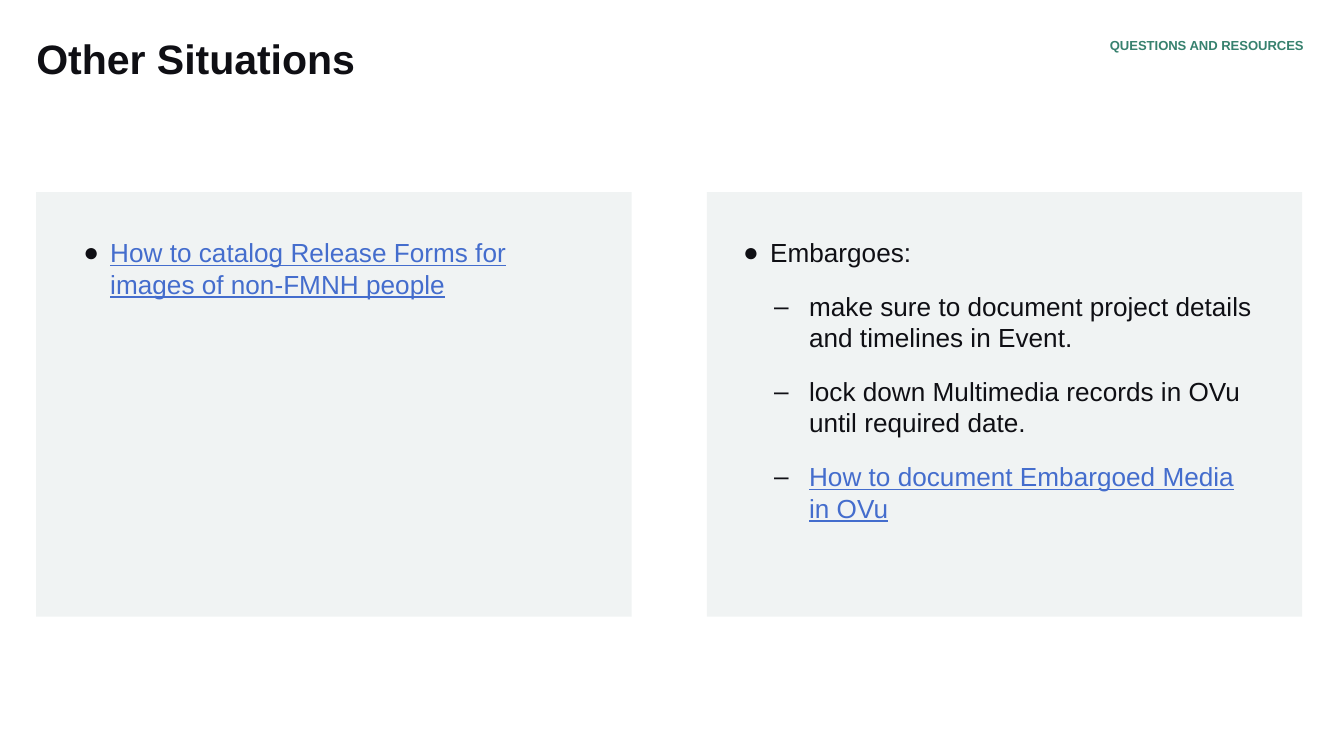
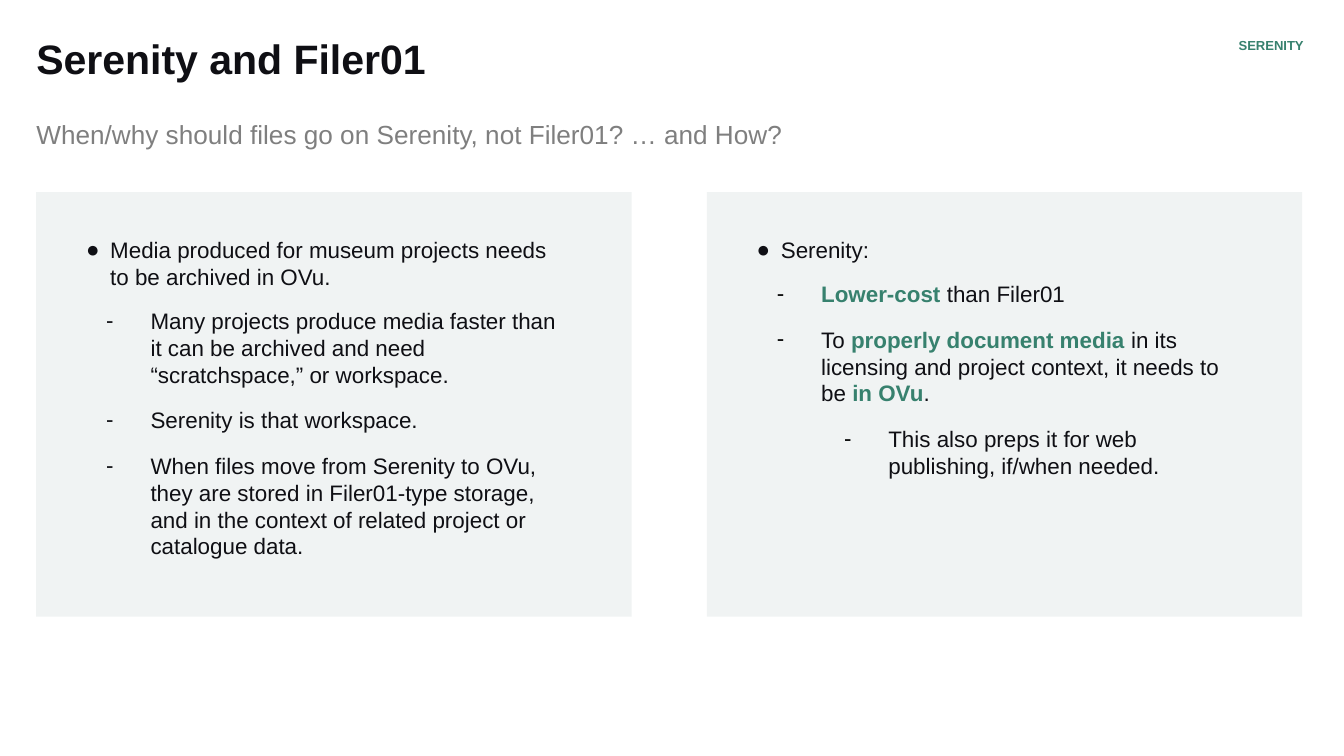
from lxml.etree import SubElement
from pptx import Presentation
from pptx.dml.color import RGBColor
from pptx.enum.shapes import MSO_SHAPE
from pptx.enum.text import MSO_ANCHOR, MSO_AUTO_SIZE, PP_ALIGN
from pptx.oxml.ns import qn
from pptx.util import Inches, Pt

INK = RGBColor(0x0F, 0x0F, 0x14)
BLACK = RGBColor(0x00, 0x00, 0x00)
GREEN = RGBColor(0x37, 0x81, 0x6E)
GREY = RGBColor(0x7F, 0x7F, 0x7F)
LINK = RGBColor(0x44, 0x6D, 0xCD)
PANEL = RGBColor(0xF0, 0xF3, 0xF3)
FONT = "Arial"
PANEL_LEFTS = (0.27, 5.26)

# Bullet styles: character, level, left margin, hanging indent
DOT = ("●", 0, 0.2, 0.2)
DOT_TIGHT = ("●", 0, 0.2, 0.18)
DASH = ("–", 1, 0.49, 0.26)
HYPHEN = ("-", 0, 0.5, 0.33)
SUB_HYPHEN = ("-", 1, 1, 0.33)


class Deck:
    def __init__(self):
        self.prs = Presentation()
        self.prs.slide_width = Inches(10)
        self.prs.slide_height = Inches(10) * 9 // 16
        self.s = None

    def add_slide(self, title, tag):
        """Start a two-column slide with its title, section tag and panels."""
        self.s = self.prs.slides.add_slide(self.prs.slide_layouts[3])
        self.line(self.s.shapes.title, (0.27, 0.29, 7.99, 0.59), title, 22, INK,
                  bold=True, spacing=0.9)
        for left in PANEL_LEFTS:
            self.panel(left)
        self.line(self.text_box(), (7.57, 0.29, 2.13, 0.16), tag, 7, GREEN,
                  bold=True, spacing=0.9, align=PP_ALIGN.RIGHT, right=0)

    def text_box(self):
        return self.s.shapes.add_textbox(0, 0, 0, 0)

    def frame(self, sp, at, top=0, right=0.1):
        sp.left, sp.top, sp.width, sp.height = (Inches(v) for v in at)
        tf = sp.text_frame
        tf.word_wrap = True
        tf.auto_size = MSO_AUTO_SIZE.NONE
        tf.vertical_anchor = MSO_ANCHOR.TOP
        tf.margin_left, tf.margin_top = Inches(0), Inches(top)
        tf.margin_right, tf.margin_bottom = Inches(right), Inches(0.1)
        return tf

    def style(self, font, size, color, bold=False):
        font.name, font.size, font.bold = FONT, Pt(size), bold
        font.color.rgb = color

    def line(self, sp, at, text, size, color, bold=False, spacing=1.0,
             align=PP_ALIGN.LEFT, right=0.1):
        tf = self.frame(sp, at, right=right)
        tf.text = text
        p = tf.paragraphs[0]
        p.alignment, p.line_spacing = align, spacing
        self.style(p.runs[0].font, size, color, bold)

    def subtitle(self, text):
        self.line(self.text_box(), (0.27, 0.88, 7.09, 0.47), text, 14, GREY)

    def panel(self, left):
        sp = self.s.shapes.add_shape(MSO_SHAPE.RECTANGLE, Inches(left), Inches(1.43),
                                     Inches(4.43), Inches(3.16))
        sp.shadow.inherit = False
        sp.fill.solid()
        sp.fill.fore_color.rgb = PANEL
        sp.line.fill.background()
        # Panels lie behind the placeholders
        self.s.shapes._spTree.insert(2, sp._element)

    def bullet(self, p, kind, color):
        char, level, margin, hang = kind
        p.level = level
        pPr = p._p.get_or_add_pPr()
        pPr.set("marL", str(Inches(margin)))
        pPr.set("indent", str(-Inches(hang)))
        clr = SubElement(pPr, qn("a:buClr"))
        SubElement(clr, qn("a:srgbClr"), val=str(color))
        SubElement(pPr, qn("a:buFont"), typeface=FONT)
        SubElement(pPr, qn("a:buChar"), char=char)

    def bullets(self, column, left, width, size, items, sub_color=INK):
        """Fill a column; items are (bullet, space before, runs).

        Each run is text, or (text, colour): green is bold, link underlined.
        """
        tf = self.frame(self.s.placeholders[column], (left, 1.66, width, 2.56), top=0.1)
        for i, (kind, before, runs) in enumerate(items):
            p = tf.paragraphs[0] if i == 0 else tf.add_paragraph()
            self.bullet(p, kind, sub_color if i else INK)
            p.space_before, p.space_after = Pt(before), Pt(0)
            p.line_spacing = 1.0
            for run in runs:
                text, color = (run, INK) if isinstance(run, str) else run
                r = p.add_run()
                r.text = text
                self.style(r.font, size, color, bold=color == GREEN)
                if color == LINK:
                    r.font.underline = True


def main():
    deck = Deck()

    # Other situations
    deck.add_slide("Other Situations", "QUESTIONS AND RESOURCES")
    deck.bullets(1, 0.62, 3.72, 14, [
        (DOT, 0, [("How to catalog Release Forms for images of non-FMNH people", LINK)]),
    ])
    deck.bullets(2, 5.53, 3.92, 14, [
        (DOT, 0, ["Embargoes:"]),
        (DASH, 12, ["make sure to document project details and timelines in Event."]),
        (DASH, 12, ["lock down Multimedia records in OVu until required date."]),
        (DASH, 12, [("How to document Embargoed Media in OVu", LINK)]),
    ])

    # Serenity and Filer01
    deck.add_slide("Serenity and Filer01", "SERENITY")
    deck.subtitle("When/why should files go on Serenity, not Filer01? … and How?")
    deck.bullets(1, 0.62, 3.72, 12, [
        (DOT_TIGHT, 0, ["Media produced for museum projects needs to be archived in OVu."]),
        (HYPHEN, 9, ["Many projects produce media faster than it can be archived and need "
                     "“scratchspace,” or workspace."]),
        (HYPHEN, 10, ["Serenity is that workspace."]),
        (HYPHEN, 10, ["When files move from Serenity to OVu, they are stored in Filer01-type "
                      "storage, and in the context of related project or catalogue data."]),
    ])
    deck.bullets(2, 5.61, 3.72, 12, [
        (DOT_TIGHT, 0, ["Serenity:"]),
        (HYPHEN, 9, [("Lower-cost", GREEN), " than Filer01"]),
        (HYPHEN, 10, ["To ", ("properly document media ", GREEN),
                      "in its licensing and project context, it needs to be ",
                      ("in OVu", GREEN), "."]),
        (SUB_HYPHEN, 10, ["This also preps it for web publishing, if/when needed."]),
    ], sub_color=BLACK)

    deck.prs.save("out.pptx")


if __name__ == "__main__":
    main()
